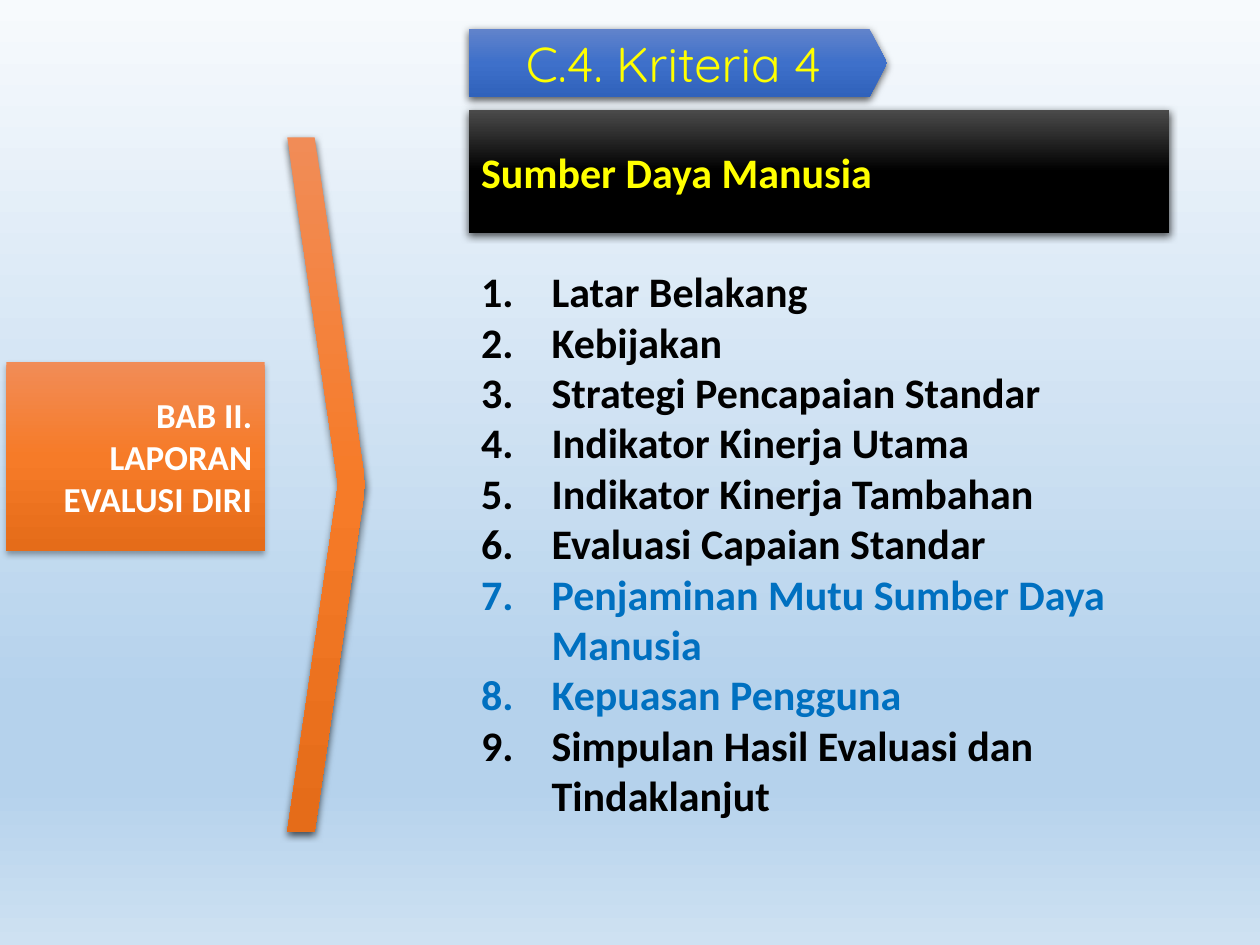
import pptx
import pptx.util
import pptx.dml.color
import pptx.enum.shapes
import pptx.enum.text
import pptx.oxml.ns
from lxml import etree

Inches = pptx.util.Inches
qn = pptx.oxml.ns.qn
Kind = pptx.enum.shapes.MSO_SHAPE
Align = pptx.enum.text.PP_ALIGN
Anchor = pptx.enum.text.MSO_ANCHOR

SKY = [(0, "F7FAFD"), (74, "B5D2EC"), (83, "B5D2EC"), (100, "CEE1F2")]
ORANGE = [(0, "F18C57"), (50, "F67B28"), (100, "E56C19")]
BLUE = [(0, "6183CB"), (50, "3E70CA"), (100, "3062BB")]
BLACK = [(0, "4B4B4B"), (50, "000000"), (100, "000000")]

# Shadow: opacity %, blur and distance in points
HARD = (63, 4.5, 1.5)
SOFT = (32, 3.5, 2.2)

TOPICS = [
    "Latar Belakang",
    "Kebijakan",
    "Strategi Pencapaian Standar",
    "Indikator Kinerja Utama",
    "Indikator Kinerja Tambahan",
    "Evaluasi Capaian Standar",
    "Penjaminan Mutu Sumber Daya Manusia",
    "Kepuasan Pengguna",
    "Simpulan Hasil Evaluasi dan Tindaklanjut",
]
MARKED = (6, 7)


def color(code):
    return pptx.dml.color.RGBColor.from_string(code)


def node(parent, tag, **attrs):
    return etree.SubElement(parent, qn(tag), {k: str(v) for k, v in attrs.items()})


def blend(fill, root, stops):
    """Fill from top to bottom with any number of colour stops."""
    fill.gradient()
    fill.gradient_angle = 270
    items = root.find(".//" + qn("a:gsLst"))
    for old in list(items):
        items.remove(old)
    for place, code in stops:
        stop = node(items, "a:gs", pos=place * 1000)
        node(stop, "a:srgbClr", val=code)


def shade(shape, alpha, blur, dist):
    shape.shadow.inherit = False
    effects = shape._element.spPr.find(qn("a:effectLst"))
    outer = node(effects, "a:outerShdw", blurRad=pptx.util.Pt(blur),
                 dist=pptx.util.Pt(dist), dir=5400000, rotWithShape=0)
    black = node(outer, "a:srgbClr", val="000000")
    node(black, "a:alpha", val=alpha * 1000)


def style(para, size, code, bold=True, face="Calibri"):
    for run in para.runs:
        run.font.name = face
        run.font.size = pptx.util.Pt(size)
        run.font.bold = bold
        run.font.color.rgb = color(code)


def block(slide, kind, box, stops, shadow=HARD, adjust=None):
    shape = slide.shapes.add_shape(kind, *map(Inches, box))
    blend(shape.fill, shape._element.spPr, stops)
    shape.line.fill.background()
    shade(shape, *shadow)
    if adjust is not None:
        shape.adjustments[0] = adjust
    return shape


def label(shape, text, align, size, code, **font):
    frame = shape.text_frame
    frame.text = text
    frame.word_wrap = True
    frame.vertical_anchor = Anchor.MIDDLE
    para = frame.paragraphs[0]
    para.alignment = align
    style(para, size, code, **font)


def listing(slide, box, items, marked):
    frame = slide.shapes.add_textbox(*map(Inches, box)).text_frame
    frame.text = "\n".join(items)
    frame.word_wrap = True
    frame.auto_size = pptx.enum.text.MSO_AUTO_SIZE.SHAPE_TO_FIT_TEXT
    indent = Inches(0.56)
    for i, para in enumerate(frame.paragraphs):
        style(para, 24, "0070C0" if i in marked else "000000")
        props = para._p.get_or_add_pPr()
        props.set("marL", str(indent))
        props.set("indent", str(-indent))
        node(props, "a:buFont", typeface="+mj-lt")
        node(props, "a:buAutoNum", type="arabicPeriod")


def main():
    deck = pptx.Presentation()
    deck.slide_width, deck.slide_height = Inches(10), Inches(7.5)
    slide = deck.slides.add_slide(deck.slide_layouts[6])
    blend(slide.background.fill, slide._element, SKY)

    # Title bar and bracket
    title = block(slide, Kind.RECTANGLE, (3.72, 0.87, 5.56, 0.98), BLACK)
    label(title, "Sumber Daya Manusia", Align.LEFT, 24, "FFFF00")
    block(slide, Kind.CHEVRON, (2.28, 1.09, 0.62, 5.51), ORANGE, adjust=0.65)

    # Criterion tag
    tag = block(slide, Kind.PENTAGON, (3.72, 0.23, 3.32, 0.54), BLUE, adjust=0.26)
    label(tag, "C.4. Kriteria 4", Align.CENTER, 28, "FFFF00",
          bold=False, face="Quicksand")

    # Numbered topics
    listing(slide, (3.72, 2.06, 5.56, 4.54), TOPICS, MARKED)

    # Chapter box
    part = block(slide, Kind.RECTANGLE, (0.05, 2.87, 2.05, 1.5), ORANGE, SOFT)
    label(part, "BAB II. LAPORAN EVALUSI DIRI", Align.RIGHT, 20, "FFFFFF")

    deck.save("out.pptx")


if __name__ == "__main__":
    main()
